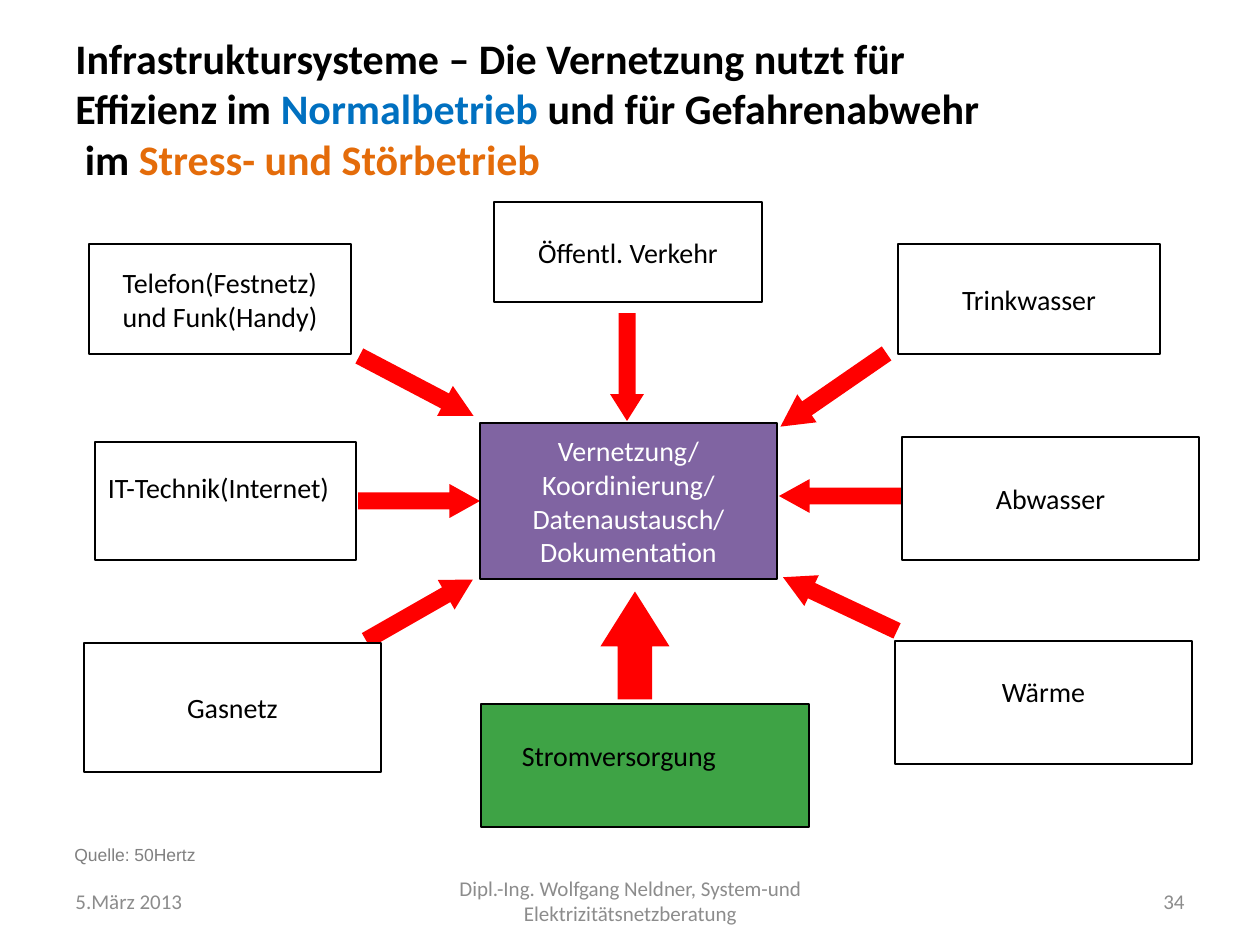
from pptx import Presentation
from pptx.dml.color import RGBColor
from pptx.enum.shapes import MSO_SHAPE as Shape
from pptx.enum.text import MSO_ANCHOR as Anchor, PP_ALIGN as Align
from pptx.util import Pt

EMU_PER_PX = 914400 / 126
PADDING = 6
ARROW_WIDTH = 34
COLORS = {
    "black": "000000", "white": "FFFFFF", "purple": "8064A2", "green": "3EA345",
    "red": "FF0000", "blue": "0070C0", "orange": "E46C0A",
    "footer": "8C8C8C", "source": "808080",
}
ARROWS = [
    (358, 484, 122, 0, ARROW_WIDTH),
    (779, 479, 123, 180, ARROW_WIDTH),
    (777, 587, 126, 205.2, ARROW_WIDTH),
    (573, 350, 108, 90, ARROW_WIDTH),
    (358, 593, 123, 330.3, ARROW_WIDTH),
    (769, 373, 129, 145.4, ARROW_WIDTH),
    (352, 369, 129, 27.7, ARROW_WIDTH),
    (581, 611, 108, 270, 69),
]
SYSTEMS = [
    ((494, 202, 268, 100), ["Öffentl. Verkehr"], {}),
    ((89, 244, 262, 110), ["Telefon(Festnetz)", "und Funk(Handy)"], {}),
    ((898, 244, 262, 110), ["Trinkwasser"], {}),
    ((95, 442, 261, 118), ["IT-Technik(Internet)"], {"extra_right": 14, "extra_bottom": 28}),
    ((902, 437, 297, 123), ["Abwasser"], {}),
    ((84, 643, 297, 129), ["Gasnetz"], {}),
    ((895, 641, 297, 123), ["Wärme"], {"extra_bottom": 22}),
    ((481, 704, 328, 123), ["Stromversorgung"],
     {"fill": "green", "extra_right": 52, "extra_bottom": 20}),
]
TITLE = [
    [("Infrastruktursysteme – Die Vernetzung nutzt für", "black")],
    [("Effizienz im ", "black"), ("Normalbetrieb ", "blue"),
     ("und für Gefahrenabwehr", "black")],
    [(" im ", "black"), ("Stress- und Störbetrieb", "orange")],
]
SMALL_TEXTS = [
    ((63, 876, 294, 50), "5.März 2013", Align.LEFT, "Calibri", 12, "footer"),
    ((431, 876, 399, 50),
     "Dipl.-Ing. Wolfgang Neldner, System-und Elektrizitätsnetzberatung",
     Align.CENTER, "Calibri", 12, "footer"),
    ((903, 876, 294, 50), "34", Align.RIGHT, "Calibri", 12, "footer"),
    ((62, 830, 399, 50), "Quelle: 50Hertz", Align.LEFT, "Arial", 10, "source"),
]


def px(length):
    """Turn a length in px into EMU."""
    return round(length * EMU_PER_PX)


def rgb(name):
    """Look up a named colour."""
    return RGBColor.from_string(COLORS[name])


def set_font(font, size, color, name="Calibri"):
    """Set name, size and colour of a font."""
    font.name, font.size = name, Pt(size)
    font.color.rgb = rgb(color)


def add_arrow(slide, left, top, length, rotation, width):
    """Add a red block arrow whose head suits its length."""
    arrow = slide.shapes.add_shape(Shape.RIGHT_ARROW, px(left), px(top), px(length), px(width))
    arrow.adjustments[1] = length / 4 / ARROW_WIDTH
    arrow.rotation = rotation
    arrow.shadow.inherit = False
    arrow.fill.solid()
    arrow.fill.fore_color.rgb = rgb("red")
    arrow.line.fill.background()


def add_box(slide, bounds, lines, fill="white", color="black", border=1.5,
            extra_right=0, extra_bottom=0):
    """Add a bordered rectangle with centred lines of text."""
    box = slide.shapes.add_shape(Shape.RECTANGLE, *map(px, bounds))
    box.shadow.inherit = False
    box.fill.solid()
    box.fill.fore_color.rgb = rgb(fill)
    box.line.color.rgb = rgb("black")
    box.line.width = Pt(border)
    frame = box.text_frame
    frame.word_wrap = True
    frame.vertical_anchor = Anchor.MIDDLE
    frame.margin_left = frame.margin_top = px(PADDING)
    frame.margin_right = px(PADDING + extra_right)
    frame.margin_bottom = px(PADDING + extra_bottom)
    frame.text = "\n".join(lines)
    for paragraph in frame.paragraphs:
        paragraph.alignment = Align.CENTER
        set_font(paragraph.font, 16, color)


def add_text_frame(slide, bounds):
    """Add a wrapping, vertically centred text box and return its frame."""
    frame = slide.shapes.add_textbox(*map(px, bounds)).text_frame
    frame.word_wrap = True
    frame.vertical_anchor = Anchor.MIDDLE
    return frame


def add_title(slide):
    """Add the three-line title with coloured phrases."""
    frame = add_text_frame(slide, (63, 29, 1134, 158))
    for number, phrases in enumerate(TITLE):
        paragraph = frame.add_paragraph() if number else frame.paragraphs[0]
        paragraph.font.bold = True
        for text, color in phrases:
            run = paragraph.add_run()
            run.text = text
            set_font(run.font, 24, color)


def add_small_text(slide, bounds, text, alignment, font_name, size, color):
    """Add a one-paragraph footer or source text."""
    frame = add_text_frame(slide, bounds)
    frame.text = text
    paragraph = frame.paragraphs[0]
    paragraph.alignment = alignment
    set_font(paragraph.font, size, color, font_name)


def main():
    """Build the slide and save it."""
    deck = Presentation()
    deck.slide_width, deck.slide_height = px(1260), px(945)
    slide = deck.slides.add_slide(deck.slide_layouts[6])
    for arrow in ARROWS:
        add_arrow(slide, *arrow)
    add_box(slide, (480, 423, 297, 156),
            ["Vernetzung/ Koordinierung/ Datenaustausch/", "Dokumentation"],
            fill="purple", color="white", border=0.75)
    for bounds, lines, style in SYSTEMS:
        add_box(slide, bounds, lines, **style)
    add_title(slide)
    for small_text in SMALL_TEXTS:
        add_small_text(slide, *small_text)
    deck.save("out.pptx")


if __name__ == "__main__":
    main()
